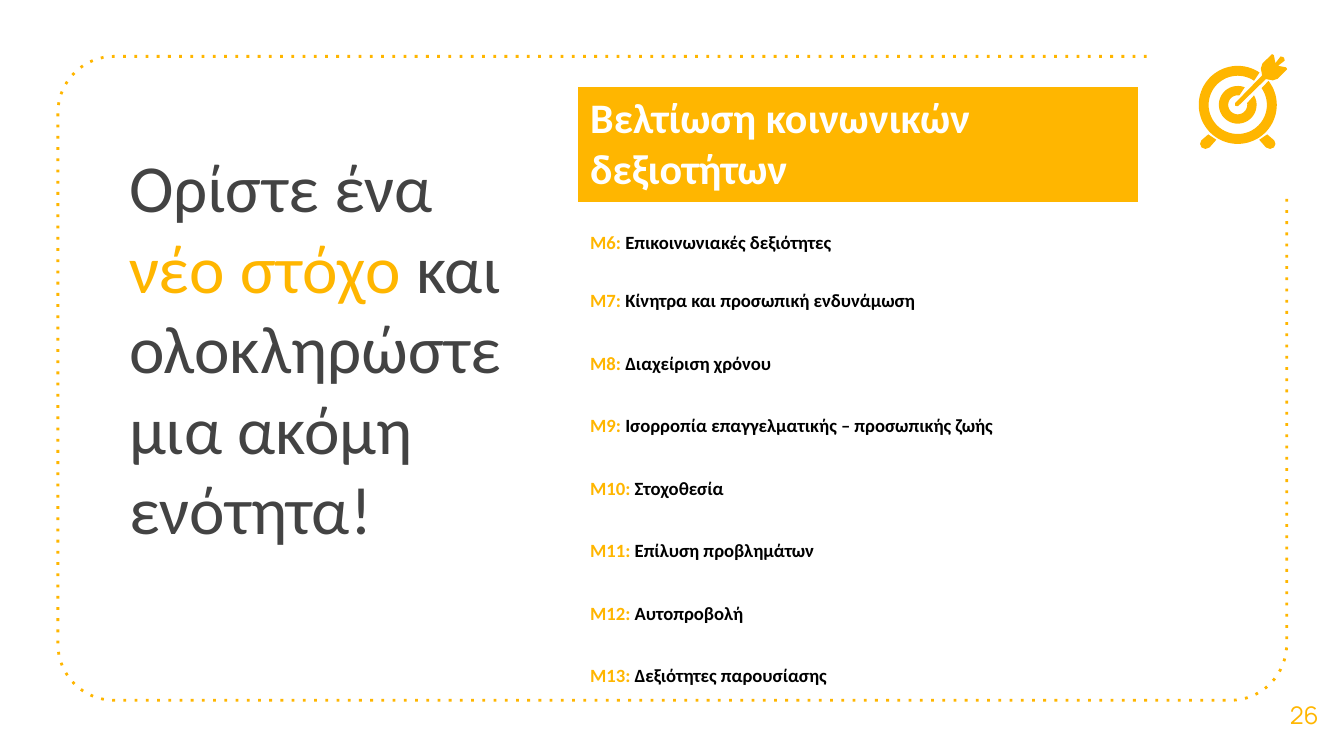
from collections import namedtuple
from dataclasses import dataclass
from math import cos, radians, sin

from pptx import Presentation
from pptx.dml.color import RGBColor
from pptx.enum import dml, text
from pptx.util import Pt

Box = namedtuple("Box", "left top width height")


@dataclass(frozen=True)
class Theme:
    """Colours, fonts and type sizes of the slide."""

    accent: RGBColor = RGBColor(0xFF, 0xB6, 0x00)
    heading: RGBColor = RGBColor(0x43, 0x43, 0x43)
    ink: RGBColor = RGBColor(0, 0, 0)
    paper: RGBColor = RGBColor(0xFF, 0xFF, 0xFF)
    font: str = "Calibri"
    number_font: str = "Manrope"
    title_size: float = 36
    header_size: float = 22.5
    item_size: float = 10
    number_size: float = 13


THEME = Theme()

MODULES = [
    "Επικοινωνιακές δεξιότητες",
    "Κίνητρα και προσωπική ενδυνάμωση",
    "Διαχείριση χρόνου",
    "Ισορροπία επαγγελματικής – προσωπικής ζωής",
    "Στοχοθεσία",
    "Επίλυση προβλημάτων",
    "Αυτοπροβολή",
    "Δεξιότητες παρουσίασης",
]
FIRST_MODULE = 6


def set_format(target, values):
    """Set every attribute named in a dict of format values."""
    for name, value in values.items():
        setattr(target, name, value)


def place(shape, box):
    """Move and size a shape to a box in points."""
    set_format(shape, {name: Pt(value) for name, value in box._asdict().items()})


def write_runs(paragraph, runs, size, font=THEME.font, bold=False):
    """Add (text, colour) runs to a paragraph."""
    for words, colour in runs:
        run = paragraph.add_run()
        run.text = words
        set_format(run.font, {"size": Pt(size), "name": font, "bold": bold})
        run.font.color.rgb = colour


def frame_format(anchor):
    """Give the format values shared by the free text frames."""
    margins = {f"margin_{side}": Pt(7.2) for side in ("left", "top", "right", "bottom")}
    return {"word_wrap": True, "auto_size": text.MSO_AUTO_SIZE.NONE,
            "vertical_anchor": anchor, **margins}


def arc(centre_x, centre_y, radius, start, end, steps):
    """Return points on an arc, with angles in degrees counted anticlockwise."""
    angles = [radians(start + (end - start) * step / steps) for step in range(steps + 1)]
    return [(centre_x + radius * cos(angle), centre_y - radius * sin(angle)) for angle in angles]


def add_outline(slide, points, close=True):
    """Draw a freeform without shadow through points."""
    vertices = [(Pt(x), Pt(y)) for x, y in points]
    builder = slide.shapes.build_freeform(*vertices[0], scale=1.0)
    builder.add_line_segments(vertices[1:], close=close)
    shape = builder.convert_to_shape()
    shape.shadow.inherit = False
    return shape


def add_dotted_frame(slide, box):
    """Draw the rounded dotted frame, left open at the top right corner."""
    radius = 30.2
    right, bottom = box.left + box.width, box.top + box.height
    inner_left, inner_right = box.left + radius, right - radius
    points = [(right - 75, box.top)]
    points += arc(inner_left, box.top + radius, radius, 90, 180, 16)
    points += arc(inner_left, bottom - radius, radius, 180, 270, 16)
    points += arc(inner_right, bottom - radius, radius, 270, 360, 16)
    points.append((right, box.top + 75))
    shape = add_outline(slide, points, close=False)
    shape.fill.background()
    shape.line.color.rgb = THEME.accent
    set_format(shape.line, {"width": Pt(1.5), "dash_style": dml.MSO_LINE.ROUND_DOT})
    for dash in shape.element.xpath(".//a:prstDash"):
        dash.set("val", "dot")


def add_target_icon(slide, box):
    """Draw the target with two rings, two feet and an arrow."""
    centre_x, centre_y = box.left + 20.9, box.top + 27.4
    outer_ring = arc(0, 0, 20.9, 56, 398, 72) + arc(0, 0, 15.6, 395, 56, 60)
    inner_ring = arc(0, 0, 10.1, 68, 390, 48) + arc(0, 0, 5.1, 370, 80, 36)
    left_foot = [(-15.8, 15.8), (-19.5, 19), (-20.2, 20.9), (-19.4, 22.8),
                 (-17.3, 23.6), (-15.1, 22.8), (-11.5, 18.7)]
    right_foot = [(-x, y) for x, y in left_foot]
    arrow_half = [(24.3, -25.6), (23, -25.9), (20.2, -22.3), (19.4, -26.6), (18.4, -27.2),
                  (13.3, -22.2), (12.4, -19.5), (13.1, -15.8), (-1.4, -0.9), (-1.3, 0.5)]
    arrow = arrow_half + [(-0.7 - y, -0.7 - x) for x, y in reversed(arrow_half)]
    for part in (outer_ring, inner_ring, left_foot, right_foot, arrow):
        shape = add_outline(slide, [(centre_x + x, centre_y + y) for x, y in part])
        shape.fill.solid()
        shape.fill.fore_color.rgb = THEME.accent
        shape.line.fill.background()


def add_title(slide, box):
    """Fill the title placeholder with the call to action."""
    title = slide.shapes.title
    place(title, box)
    set_format(title.text_frame, frame_format(text.MSO_ANCHOR.TOP))
    paragraph = title.text_frame.paragraphs[0]
    paragraph.alignment = text.PP_ALIGN.LEFT
    runs = [("Ορίστε ένα ", THEME.heading), ("νέο στόχο ", THEME.accent),
            ("και ολοκληρώστε μια ακόμη ενότητα!", THEME.heading)]
    write_runs(paragraph, runs, THEME.title_size)


def add_module_table(slide, box):
    """Add the table of modules under a filled header."""
    header_height = 62
    row_height = (box.height - header_height) / len(MODULES)
    frame = slide.shapes.add_table(len(MODULES) + 1, 1, *map(Pt, box))
    table = frame.table
    set_format(table, {"first_row": False, "horz_banding": False})
    table.rows[0].height = Pt(header_height)
    header = table.cell(0, 0)
    header.fill.solid()
    header.fill.fore_color.rgb = THEME.accent
    write_runs(header.text_frame.paragraphs[0],
               [("Βελτίωση κοινωνικών δεξιοτήτων", THEME.paper)], THEME.header_size, bold=True)
    for index, module in enumerate(MODULES):
        table.rows[index + 1].height = Pt(row_height)
        cell = table.cell(index + 1, 0)
        cell.fill.background()
        set_format(cell, {"vertical_anchor": text.MSO_ANCHOR.MIDDLE,
                          "margin_top": Pt(9 if index else 13)})
        runs = [(f"M{FIRST_MODULE + index}: ", THEME.accent), (module, THEME.ink)]
        write_runs(cell.text_frame.paragraphs[0], runs, THEME.item_size, bold=True)


def add_page_number(slide, box):
    """Add the page number in the bottom right corner."""
    frame = slide.shapes.add_textbox(*map(Pt, box)).text_frame
    set_format(frame, frame_format(text.MSO_ANCHOR.MIDDLE))
    paragraph = frame.paragraphs[0]
    paragraph.alignment = text.PP_ALIGN.CENTER
    write_runs(paragraph, [("26", THEME.accent)], THEME.number_size, THEME.number_font)


def main():
    """Build the slide and save it."""
    presentation = Presentation()
    set_format(presentation, {"slide_width": Pt(720), "slide_height": Pt(405)})
    slide = presentation.slides.add_slide(presentation.slide_layouts[5])
    add_dotted_frame(slide, Box(31, 30.2, 658.3, 345))
    add_title(slide, Box(61.9, 70.6, 223.9, 67.7))
    add_page_number(slide, Box(677.5, 361.4, 42.5, 43.2))
    add_target_icon(slide, Box(642.2, 28.8, 47.5, 51.1))
    add_module_table(slide, Box(309, 46.4, 301, 330))
    presentation.save("out.pptx")


if __name__ == "__main__":
    main()
